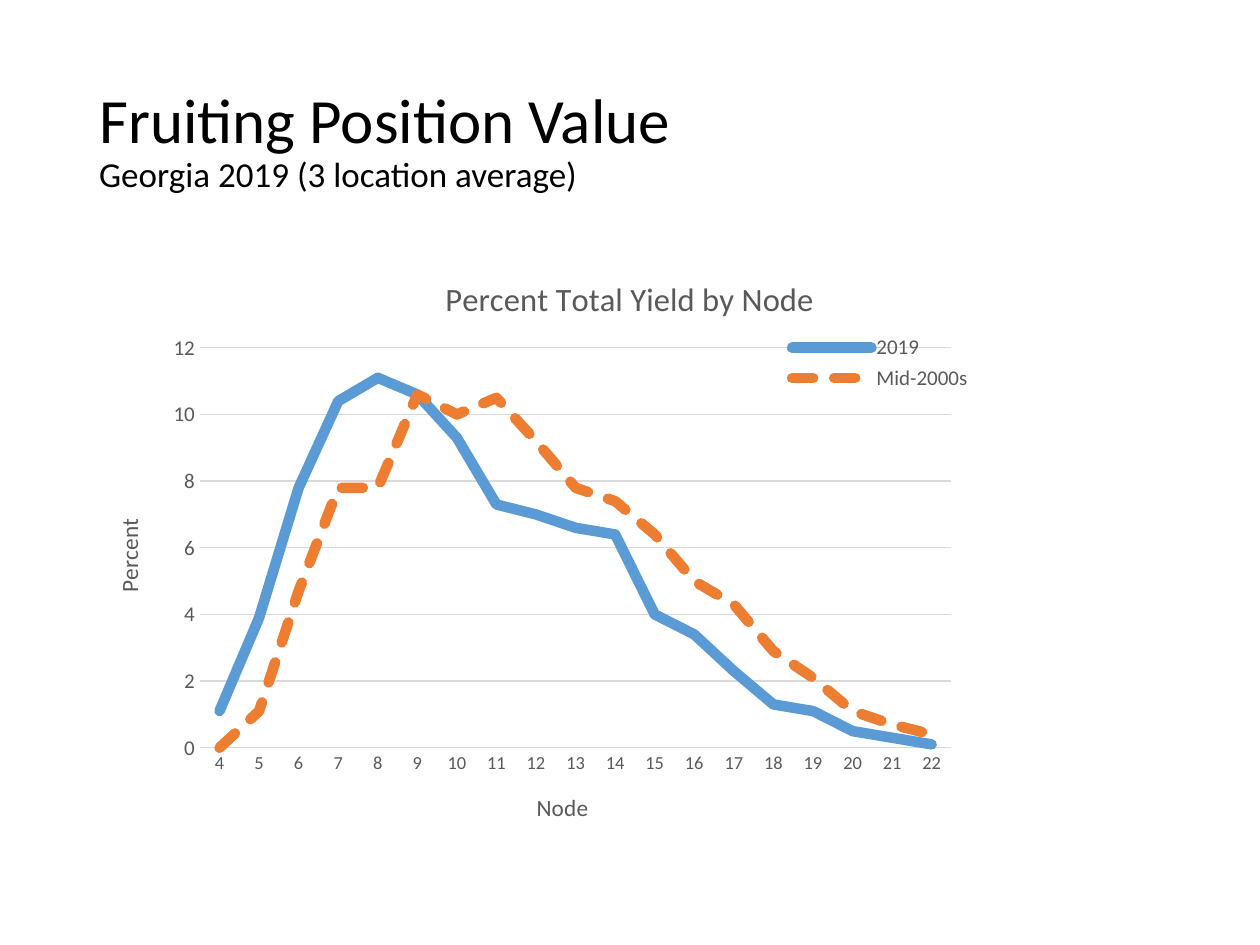
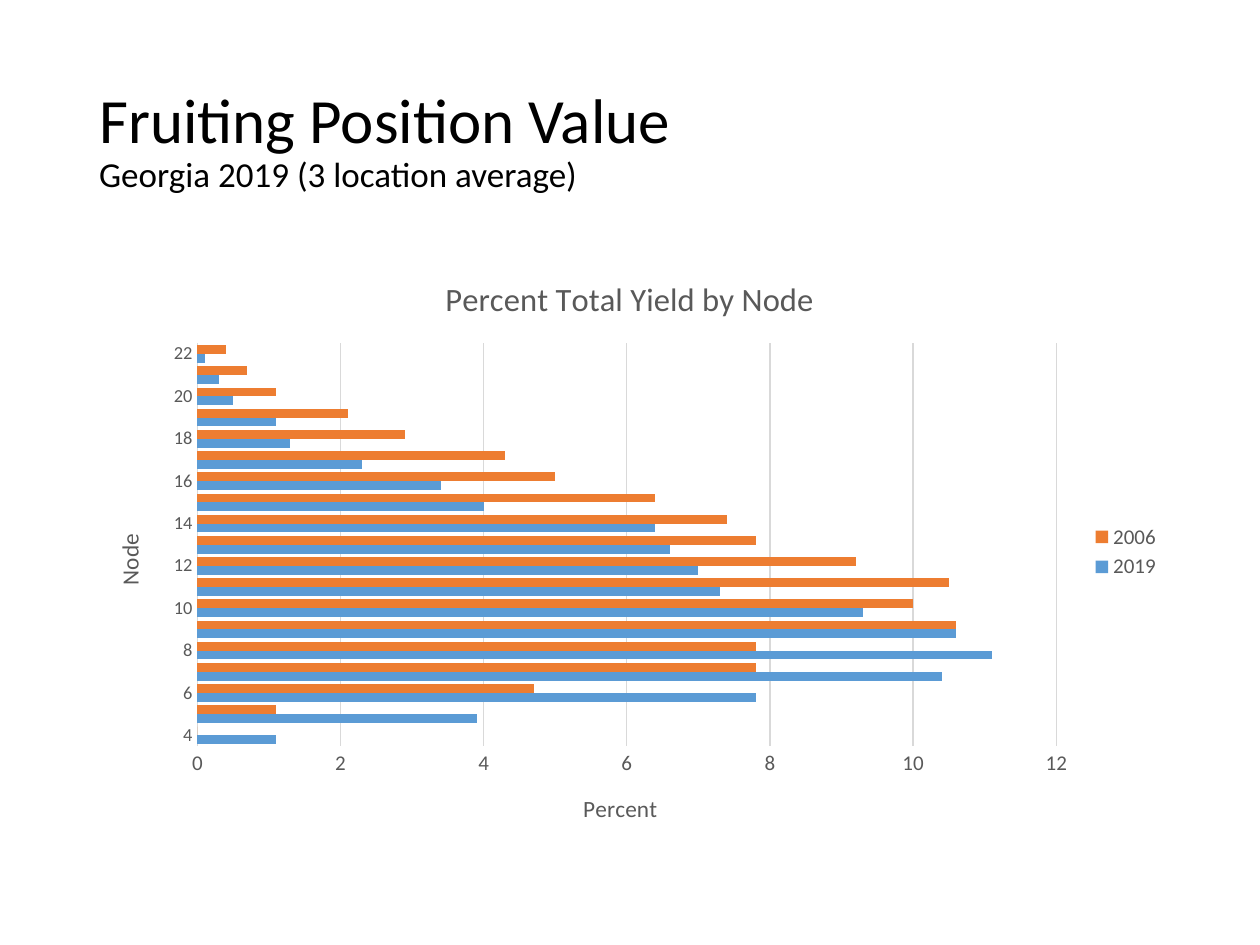
from pptx import Presentation
from pptx.chart.data import CategoryChartData
from pptx.dml.color import RGBColor
from pptx.enum.chart import XL_CHART_TYPE, XL_LEGEND_POSITION, XL_TICK_MARK
from pptx.enum.dml import MSO_LINE
from pptx.enum.text import MSO_ANCHOR
from pptx.oxml import parse_xml
from pptx.oxml.ns import nsdecls, qn
from pptx.util import Cm, Pt

FONT = "Calibri"
BLACK = RGBColor(0x00, 0x00, 0x00)
GREY = RGBColor(0x59, 0x59, 0x59)
GRID_GREY = RGBColor(0xD9, 0xD9, 0xD9)
BLUE = RGBColor(0x5B, 0x9B, 0xD5)
ORANGE = RGBColor(0xED, 0x7D, 0x31)

# Boxes are left, top, width, height
TITLE_BOX = (Cm(1.75), Cm(1.02), Cm(21.9), Cm(3.68))
CHART_BOX = (Cm(1.75), Cm(5.08), Cm(21.9), Cm(12.09))

NODES = [str(node) for node in range(4, 23)]
YIELD_2019 = [1.1, 3.9, 7.8, 10.4, 11.1, 10.6, 9.3, 7.3, 7, 6.6,
              6.4, 4, 3.4, 2.3, 1.3, 1.1, 0.5, 0.3, 0.1]
YIELD_2006 = [0, 1.1, 4.7, 7.8, 7.8, 10.6, 10, 10.5, 9.2, 7.8,
              7.4, 6.4, 5, 4.3, 2.9, 2.1, 1.1, 0.7, 0.4]


def style_font(font, size, colour):
    font.name = FONT
    font.size = Pt(size)
    font.bold = False
    font.color.rgb = colour


def add_span(para, text, size, colour):
    span = para.add_run()
    span.text = text
    style_font(span.font, size, colour)


def add_title(page, box):
    frame = page.shapes.add_textbox(*box).text_frame
    frame.word_wrap = True
    frame.vertical_anchor = MSO_ANCHOR.MIDDLE
    para = frame.paragraphs[0]
    para.line_spacing = 0.9
    add_span(para, "Fruiting Position Value", 36, BLACK)
    para.add_line_break()
    add_span(para, "Georgia 2019 (3 location average)", 20, BLACK)


def place_part(part, index, x, y, width, height, inner=False):
    """Place a chart part by fractions of the chart's box."""
    for old in part.findall(qn("c:layout")):
        part.remove(old)
    target = '<c:layoutTarget val="inner"/>' if inner else ""
    part.insert(index, parse_xml(
        f'<c:layout {nsdecls("c")}><c:manualLayout>{target}'
        '<c:xMode val="edge"/><c:yMode val="edge"/>'
        f'<c:x val="{x}"/><c:y val="{y}"/><c:w val="{width}"/><c:h val="{height}"/>'
        '</c:manualLayout></c:layout>'))


def style_axis(axis, title, label_size):
    axis.major_tick_mark = axis.minor_tick_mark = XL_TICK_MARK.NONE
    style_font(axis.tick_labels.font, label_size, GREY)
    add_span(axis.axis_title.text_frame.paragraphs[0], title, 13.3, GREY)


def add_yield_chart(page, box, kind, earlier_name):
    """Add the chart with the title, axes and legend both slides share."""
    data = CategoryChartData()
    data.categories = NODES
    data.add_series("2019", YIELD_2019)
    data.add_series(earlier_name, YIELD_2006)
    chart = page.shapes.add_chart(kind, *box, data).chart
    style_font(chart.font, 10, BLACK)

    chart.has_title = True
    add_span(chart.chart_title.text_frame.paragraphs[0],
             "Percent Total Yield by Node", 18.6, GREY)
    chart.chart_title.include_in_layout = False

    # Axes
    nodes, percent = chart.category_axis, chart.value_axis
    style_axis(nodes, "Node", 10.5)
    style_axis(percent, "Percent", 12)
    percent.minimum_scale, percent.maximum_scale, percent.major_unit = 0, 12, 2
    percent.has_major_gridlines = True
    for line in (nodes.format.line, percent.major_gridlines.format.line):
        line.color.rgb = GRID_GREY
        line.width = Pt(0.75)
    percent.format.line.fill.background()

    # Legend
    chart.has_legend = True
    chart.legend.position = XL_LEGEND_POSITION.RIGHT
    chart.legend.include_in_layout = False
    style_font(chart.legend.font, 12, GREY)

    chart.plots[0].vary_by_categories = False
    return chart


def add_line_chart(page, box):
    chart = add_yield_chart(page, box, XL_CHART_TYPE.LINE, "Mid-2000s")
    for series, colour in zip(chart.plots[0].series, (BLUE, ORANGE)):
        series.smooth = False
        line = series.format.line
        line.color.rgb = colour
        line.width = Pt(6)
        series._element.spPr.find(qn("a:ln")).set("cap", "rnd")
    line.dash_style = MSO_LINE.SQUARE_DOT  # the earlier years are dashed

    # Legend lies over the top right of the plot
    place_part(chart._chartSpace.chart.plotArea, 0, 0.104, 0.16, 0.692, 0.667, inner=True)
    place_part(chart.legend._element, 1, 0.64, 0.13, 0.18, 0.11)
    chart.legend.include_in_layout = True


def add_bar_chart(page, box):
    chart = add_yield_chart(page, box, XL_CHART_TYPE.BAR_CLUSTERED, "2006")
    plot = chart.plots[0]
    plot.gap_width = 40
    plot.overlap = 0
    for series, colour in zip(plot.series, (BLUE, ORANGE)):
        series.invert_if_negative = False
        series.format.fill.solid()
        series.format.fill.fore_color.rgb = colour


def main():
    deck = Presentation()
    deck.slide_width, deck.slide_height = Cm(25.4), Cm(19.05)
    for add_chart_part in (add_line_chart, add_bar_chart):
        page = deck.slides.add_slide(deck.slide_layouts[6])
        add_title(page, TITLE_BOX)
        add_chart_part(page, CHART_BOX)
    deck.save("out.pptx")


if __name__ == "__main__":
    main()
